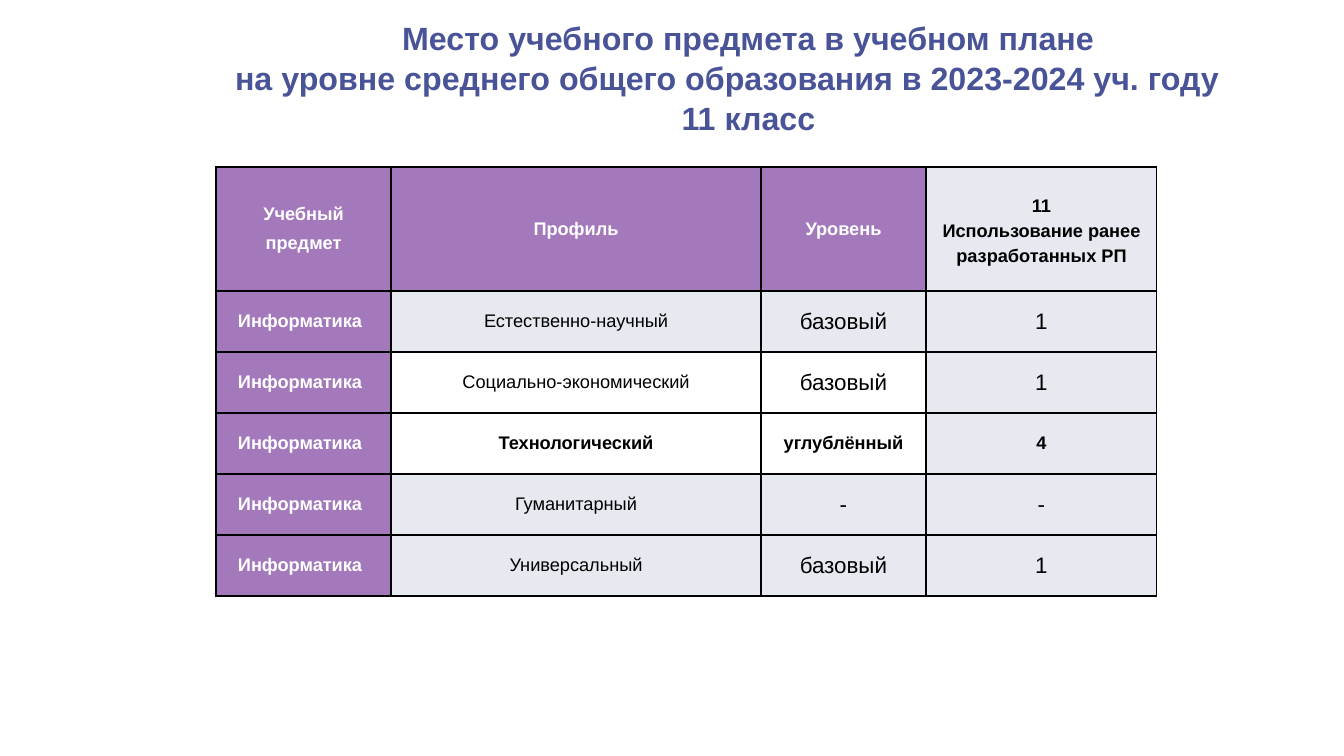
import pptx
import pptx.dml.color
import pptx.enum.text
import pptx.oxml
import pptx.oxml.ns
import pptx.util

PX = 914400 / 100.8
PURPLE, GREY, WHITE, BLACK, INDIGO = "A379BB", "E6E9EF", "FFFFFF", "000000", "495397"
CENTER = pptx.enum.text.PP_ALIGN.CENTER
LEFT = pptx.enum.text.PP_ALIGN.LEFT

HEADER = ["Учебный\nпредмет", "Профиль", "Уровень",
          "11\nИспользование ранее разработанных РП"]
SUBJECT = "Информатика"
# Profile, level, hours, bold, fill of the middle cells
PROFILES = [
    ("Естественно-научный", "базовый", "1", False, GREY),
    ("Социально-экономический", "базовый", "1", False, None),
    ("Технологический", "углублённый", "4", True, None),
    ("Гуманитарный", "-", "-", False, GREY),
    ("Универсальный", "базовый", "1", False, GREY),
]


def px(n):
    return pptx.util.Emu(round(n * PX))


def rgb(color):
    return pptx.dml.color.RGBColor.from_string(color)


def set_text(tf, text, size, color, bold, align=CENTER, spacing=None):
    tf.text = text
    tf.word_wrap = True
    for p in tf.paragraphs:
        p.alignment = align
        if spacing:
            p.line_spacing = pptx.util.Pt(spacing)
        for r in p.runs:
            r.font.name = "Arial"
            r.font.size = pptx.util.Pt(size)
            r.font.bold = bold
            r.font.color.rgb = rgb(color)


def add_borders(cell):
    tcPr = cell._tc.get_or_add_tcPr()
    for side in ("lnL", "lnR", "lnT", "lnB"):
        tcPr.append(pptx.oxml.parse_xml(
            f'<a:{side} {pptx.oxml.ns.nsdecls("a")} w="12700"><a:solidFill>'
            f'<a:srgbClr val="{BLACK}"/></a:solidFill></a:{side}>'))


def set_cell(cell, text, fill, size=13, color=BLACK, bold=True, align=CENTER, spacing=None):
    cell.margin_left = cell.margin_right = cell.margin_top = cell.margin_bottom = 0
    cell.vertical_anchor = pptx.enum.text.MSO_ANCHOR.MIDDLE
    add_borders(cell)
    if fill:
        cell.fill.solid()
        cell.fill.fore_color.rgb = rgb(fill)
    else:
        cell.fill.background()
    set_text(cell.text_frame, text, size, color, bold, align, spacing)


def add_title(s):
    tf = s.shapes.add_textbox(px(235), px(17), px(1027), px(110)).text_frame
    tf.margin_left = tf.margin_right = tf.margin_top = tf.margin_bottom = 0
    set_text(tf, "Место учебного предмета в учебном плане\n"
                 "на уровне среднего общего образования в 2023-2024 уч. году\n"
                 "11 класс", 23, INDIGO, True, spacing=28.6)
    tf.paragraphs[1].alignment = LEFT


def add_plan(s):
    widths, heights = [175, 370, 165, 231], [124] + [61] * len(PROFILES)
    tbl = s.shapes.add_table(len(heights), len(widths), px(216), px(167),
                             px(sum(widths)), px(sum(heights))).table
    tbl.first_row = tbl.horz_banding = False
    for col, w in zip(tbl.columns, widths):
        col.width = px(w)
    for row, h in zip(tbl.rows, heights):
        row.height = px(h)

    # Header row
    for c, text in enumerate(HEADER[:3]):
        set_cell(tbl.cell(0, c), text, PURPLE, color=WHITE)
    tbl.cell(0, 0).text_frame.paragraphs[0].space_after = pptx.util.Pt(6.3)
    set_cell(tbl.cell(0, 3), HEADER[3], GREY, spacing=18)

    # One row per profile
    for i, (profile, level, hours, bold, fill) in enumerate(PROFILES, 1):
        size = 13 if bold else 16
        subject = tbl.cell(i, 0)
        set_cell(subject, SUBJECT, PURPLE, color=WHITE, align=LEFT)
        subject.text_frame.paragraphs[0]._p.get_or_add_pPr().set("marL", str(px(22)))
        set_cell(tbl.cell(i, 1), profile, fill, bold=bold)
        set_cell(tbl.cell(i, 2), level, fill, size, bold=bold)
        set_cell(tbl.cell(i, 3), hours, GREY, size, bold=bold)


def main():
    prs = pptx.Presentation()
    prs.slide_width, prs.slide_height = px(1344), px(756)
    s = prs.slides.add_slide(prs.slide_layouts[6])
    add_title(s)
    add_plan(s)
    prs.save("out.pptx")


if __name__ == "__main__":
    main()
